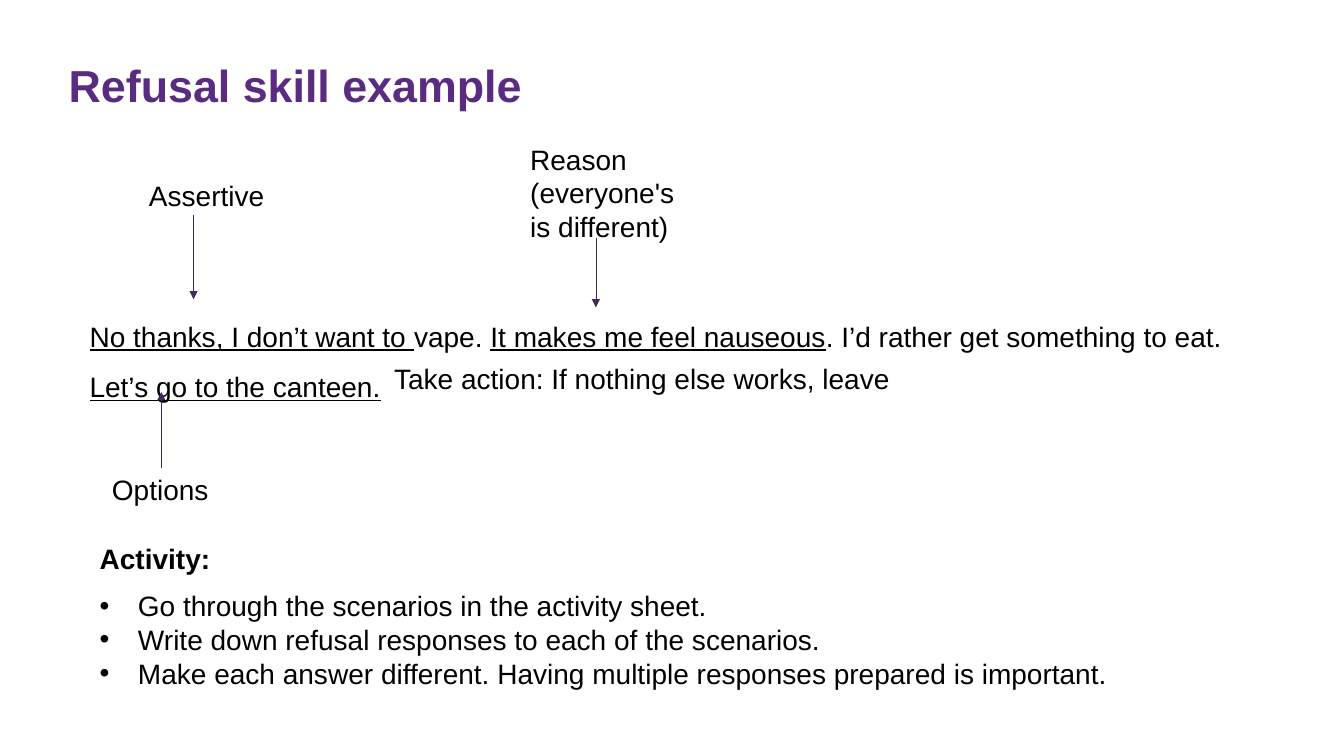
"""Build the refusal skill example slide with its labelled sentence and activity list."""
import lxml.etree
import pptx
import pptx.dml.color
import pptx.enum.shapes
import pptx.enum.text
import pptx.oxml.ns
import pptx.util

PX = 9144
THEME = {
    "font": "Arial",
    "title_color": "592C82",
    "text_color": "000000",
    "arrow_color": "3F2B56",
    "title_size": 32,
    "body_size": 20,
    "arrow_width": 0.5,
}
LEFT = pptx.enum.text.PP_ALIGN.LEFT
CENTER = pptx.enum.text.PP_ALIGN.CENTER


def write(paragraph, text, size=THEME["body_size"], color=THEME["text_color"],
          bold=False, underline=False, align=LEFT):
    """Add one formatted run to a paragraph."""
    paragraph.alignment = align
    run = paragraph.add_run()
    run.text = text
    run.font.name = THEME["font"]
    run.font.size = pptx.util.Pt(size)
    run.font.color.rgb = pptx.dml.color.RGBColor.from_string(color)
    run.font.bold = bold
    run.font.underline = underline


def add_text_frame(left, top, width, height):
    """Add a wrapping text box, given in px, and return its text frame."""
    shape = slide.shapes.add_textbox(left * PX, top * PX, width * PX, height * PX)
    shape.text_frame.word_wrap = True
    return shape.text_frame


presentation = pptx.Presentation()
presentation.slide_width = 1333 * PX
presentation.slide_height = 750 * PX
slide = presentation.slides.add_slide(presentation.slide_layouts[5])

title = slide.shapes.title
title.left, title.top, title.width, title.height = (
    length * PX for length in (68, 63, 1197, 96))
title_frame = title.text_frame
title_frame.margin_left = title_frame.margin_right = 0
title_frame.margin_top = title_frame.margin_bottom = 0
title_frame.vertical_anchor = pptx.enum.text.MSO_ANCHOR.TOP
title_frame.auto_size = pptx.enum.text.MSO_AUTO_SIZE.NONE
title_frame.word_wrap = True
title_frame.paragraphs[0].line_spacing = 0.9
write(title_frame.paragraphs[0], "Refusal skill example",
      size=THEME["title_size"], color=THEME["title_color"], bold=True)

sentence = add_text_frame(79, 295, 1176, 105).paragraphs[0]
sentence.line_spacing = 1.5
for text, underline in [
    ("No thanks, I don’t want to ", True),
    ("vape. ", False),
    ("It makes me feel nauseous", True),
    (". I’d rather get something to eat. ", False),
    ("Let’s go to the canteen.", True),
]:
    write(sentence, text, underline=underline)

labels = [
    ("Assertive", (130, 172, 150, 44), CENTER),
    ("Reason (everyone's is different)", (516, 136, 175, 111), LEFT),
    ("Options", (89, 464, 140, 44), CENTER),
    ("Take action: If nothing else works, leave", (381, 354, 572, 44), LEFT),
]
for text, box, align in labels:
    write(add_text_frame(*box).paragraphs[0], text, align=align)

for x, start, end in [(192, 213, 297), (591, 236, 305), (160, 464, 389)]:
    arrow = slide.shapes.add_connector(
        pptx.enum.shapes.MSO_CONNECTOR.STRAIGHT, x * PX, start * PX, x * PX, end * PX)
    arrow.line.width = pptx.util.Pt(THEME["arrow_width"])
    arrow.line.color.rgb = pptx.dml.color.RGBColor.from_string(THEME["arrow_color"])
    lxml.etree.SubElement(
        arrow.line._get_or_add_ln(), pptx.oxml.ns.qn("a:tailEnd"), type="triangle")
    lxml.etree.SubElement(arrow._element.spPr, pptx.oxml.ns.qn("a:effectLst"))

activity_frame = add_text_frame(89, 532, 1156, 189)
heading = activity_frame.paragraphs[0]
heading.space_after = pptx.util.Pt(10)
write(heading, "Activity:", bold=True)
for text in [
    "Go through the scenarios in the activity sheet.",
    "Write down refusal responses to each of the scenarios.",
    "Make each answer different. Having multiple responses prepared is important.",
]:
    paragraph = activity_frame.add_paragraph()
    properties = paragraph._p.get_or_add_pPr()
    properties.set("marL", str(38 * PX))
    properties.set("indent", str(-38 * PX))
    lxml.etree.SubElement(
        properties, pptx.oxml.ns.qn("a:buFont"), typeface=THEME["font"])
    lxml.etree.SubElement(properties, pptx.oxml.ns.qn("a:buChar"), char="•")
    write(paragraph, text)

presentation.save("out.pptx")
